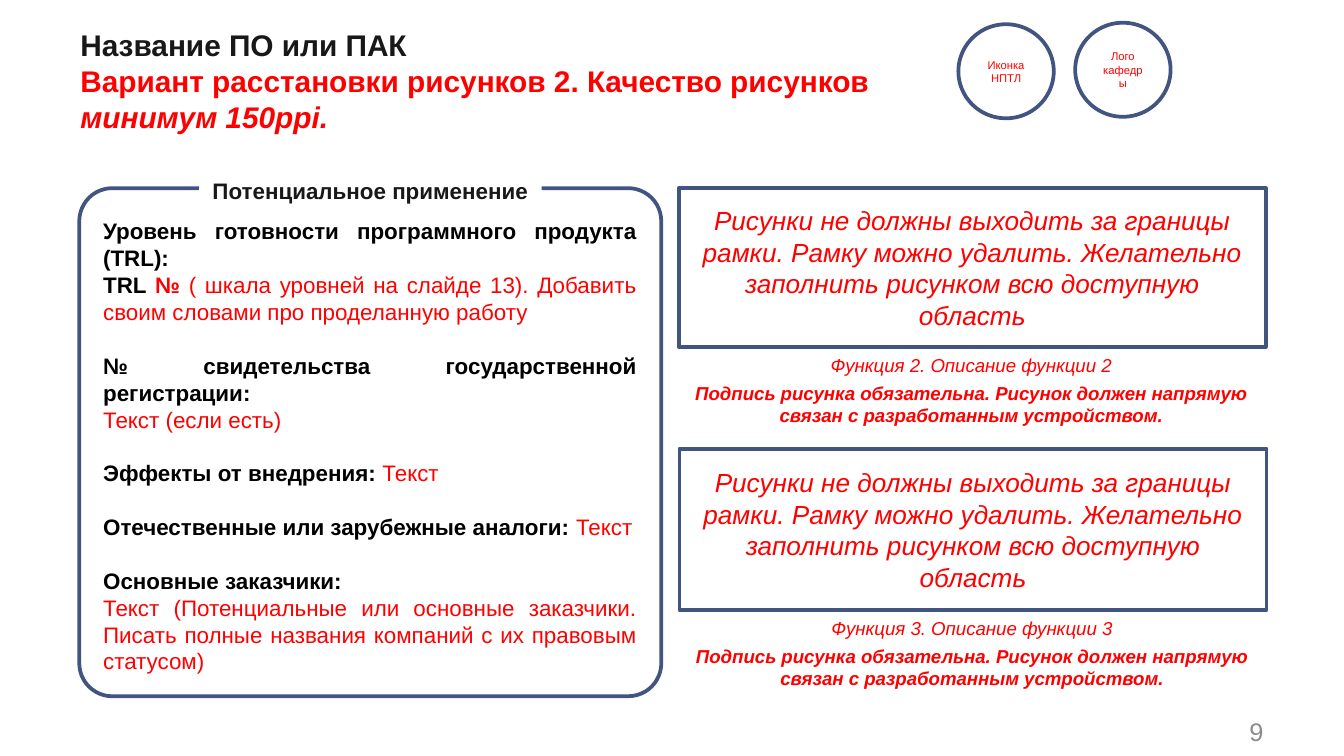
from dataclasses import dataclass

from pptx import Presentation
from pptx.dml.color import RGBColor
from pptx.enum.shapes import MSO_SHAPE
from pptx.enum.text import MSO_ANCHOR, PP_ALIGN
from pptx.util import Pt

RECTANGLE = MSO_SHAPE.RECTANGLE
ROUNDED = MSO_SHAPE.ROUNDED_RECTANGLE
OVAL = MSO_SHAPE.OVAL
TOP = MSO_ANCHOR.TOP
MIDDLE = MSO_ANCHOR.MIDDLE
LEFT = PP_ALIGN.LEFT
CENTER = PP_ALIGN.CENTER
RIGHT = PP_ALIGN.RIGHT
JUSTIFY = PP_ALIGN.JUSTIFY


@dataclass(frozen=True)
class Theme:
    font: str = "Arial"
    white: RGBColor = RGBColor(0xFF, 0xFF, 0xFF)
    black: RGBColor = RGBColor(0, 0, 0)
    heading: RGBColor = RGBColor(0x18, 0x18, 0x18)
    hint: RGBColor = RGBColor(0xFF, 0, 0)
    frame: RGBColor = RGBColor(0x42, 0x54, 0x80)
    number: RGBColor = RGBColor(0x8C, 0x8C, 0x8C)
    title_size: float = 16
    picture_size: float = 14
    number_size: float = 13.6
    body_size: float = 12
    caption_size: float = 10
    badge_size: float = 6
    frame_width: float = 2


THEME = Theme()

FRAME_HINT = (
    "Рисунки не должны выходить за границы рамки. Рамку можно удалить. "
    "Желательно заполнить рисунком всю доступную область"
)
CAPTION_HINT = (
    "Подпись рисунка обязательна. Рисунок должен напрямую "
    "связан с разработанным устройством."
)


def style(font, size=None, color=None, bold=None, italic=None):
    if size:
        font.size = Pt(size)
        font.name = THEME.font
    if color is not None:
        font.color.rgb = color
    if bold is not None:
        font.bold = bold
    if italic is not None:
        font.italic = italic


def next_paragraph(box):
    frame = box.text_frame
    if frame.paragraphs[0].runs:
        return frame.add_paragraph()
    return frame.paragraphs[0]


def add_paragraph(box, text, size, color, align=LEFT, bold=False, italic=False, after=0):
    para = next_paragraph(box)
    para.alignment = align
    para.space_after = Pt(after)
    para.add_run().text = text
    style(para.font, size, color, bold, italic)
    return para


def add_span(para, text, color=None, bold=None, italic=None):
    span = para.add_run()
    span.text = text
    style(span.font, color=color, bold=bold, italic=italic)


def add_text(page, left, top, width, height, anchor=TOP):
    box = page.shapes.add_textbox(Pt(left), Pt(top), Pt(width), Pt(height))
    box.text_frame.word_wrap = True
    box.text_frame.vertical_anchor = anchor
    return box


def add_panel(page, kind, left, top, width, height, outlined=True):
    box = page.shapes.add_shape(kind, Pt(left), Pt(top), Pt(width), Pt(height))
    box.shadow.inherit = False
    box.fill.solid()
    box.fill.fore_color.rgb = THEME.white
    if outlined:
        box.line.color.rgb = THEME.frame
        box.line.width = Pt(THEME.frame_width)
    else:
        box.line.fill.background()
    box.text_frame.word_wrap = True
    box.text_frame.vertical_anchor = MIDDLE
    return box


def add_title(page):
    box = add_text(page, 36, 10.8, 465.8, 50.4)
    para = add_paragraph(box, "Название ПО или ПАК", THEME.title_size, THEME.heading, bold=True)
    para.add_line_break()
    add_span(para, "Вариант расстановки рисунков 2. Качество рисунков ", THEME.hint)
    add_span(para, "минимум 150ppi.", THEME.hint, italic=True)


def add_application(page):
    panel = add_panel(page, ROUNDED, 42.5, 100.8, 311.8, 272.2)
    panel.adjustments[0] = 0.065

    label = add_panel(page, RECTANGLE, 106.6, 91.4, 183.6, 21.6, outlined=False)
    label.text_frame.word_wrap = False
    label.text_frame.vertical_anchor = TOP
    add_paragraph(label, "Потенциальное применение", THEME.body_size, THEME.heading, CENTER, bold=True)

    sections = [
        [
            [("Уровень готовности программного продукта (TRL): ", True, False)],
            [
                ("TRL ", True, False),
                ("№ ", True, True),
                ("( шкала уровней на слайде 13). Добавить своим словами "
                 "про проделанную работу", False, True),
            ],
        ],
        [
            [("№ свидетельства государственной регистрации:", True, False)],
            [("Текст (если есть)", False, True)],
        ],
        [[("Эффекты от внедрения: ", True, False), ("Текст", False, True)]],
        [[("Отечественные или зарубежные аналоги: ", True, False), ("Текст", False, True)]],
        [
            [("Основные заказчики:", True, False)],
            [("Текст (Потенциальные или основные заказчики. Писать полные "
              "названия компаний с их правовым статусом)", False, True)],
        ],
    ]
    body = add_text(page, 48.2, 113, 300.2, 239.8)
    for section_index, section in enumerate(sections):
        for line_index, spans in enumerate(section):
            para = next_paragraph(body)
            para.alignment = JUSTIFY
            if section_index and not line_index:
                para.space_before = Pt(14.4)
            style(para.font, THEME.body_size)
            for text, bold, is_hint in spans:
                add_span(para, text, THEME.hint if is_hint else THEME.black, bold)


def add_figure(page, number, left, top, height):
    panel = add_panel(page, RECTANGLE, left, top, 314.6, height)
    add_paragraph(panel, FRAME_HINT, THEME.picture_size, THEME.hint, CENTER, italic=True, after=3)
    caption = add_text(page, left, top + height, 313.2, 46.8)
    add_paragraph(caption, f"Функция {number}. Описание функции {number}",
                  THEME.caption_size, THEME.hint, CENTER, italic=True, after=3)
    add_paragraph(caption, CAPTION_HINT, THEME.caption_size, THEME.hint, CENTER,
                  bold=True, italic=True)


def add_badge(page, left, top, lines):
    badge = add_panel(page, OVAL, left, top, 51.1, 50.4)
    for line in lines:
        add_paragraph(badge, line, THEME.badge_size, THEME.hint, CENTER)


def add_page_number(page):
    box = add_text(page, 643.7, 380.9, 40.3, 21.6, MIDDLE)
    add_paragraph(box, "9", THEME.number_size, THEME.number, RIGHT)


def main():
    deck = Presentation()
    deck.slide_width = Pt(720)
    deck.slide_height = Pt(405)
    page = deck.slides.add_slide(deck.slide_layouts[6])
    add_title(page)
    add_page_number(page)
    add_application(page)
    add_figure(page, 2, 363.6, 100.8, 85)
    add_figure(page, 3, 364, 240.5, 86.4)
    add_badge(page, 576, 12.2, ["Лого", "кафедры"])
    add_badge(page, 513.4, 13, ["Иконка НПТЛ"])
    deck.save("out.pptx")


if __name__ == "__main__":
    main()
